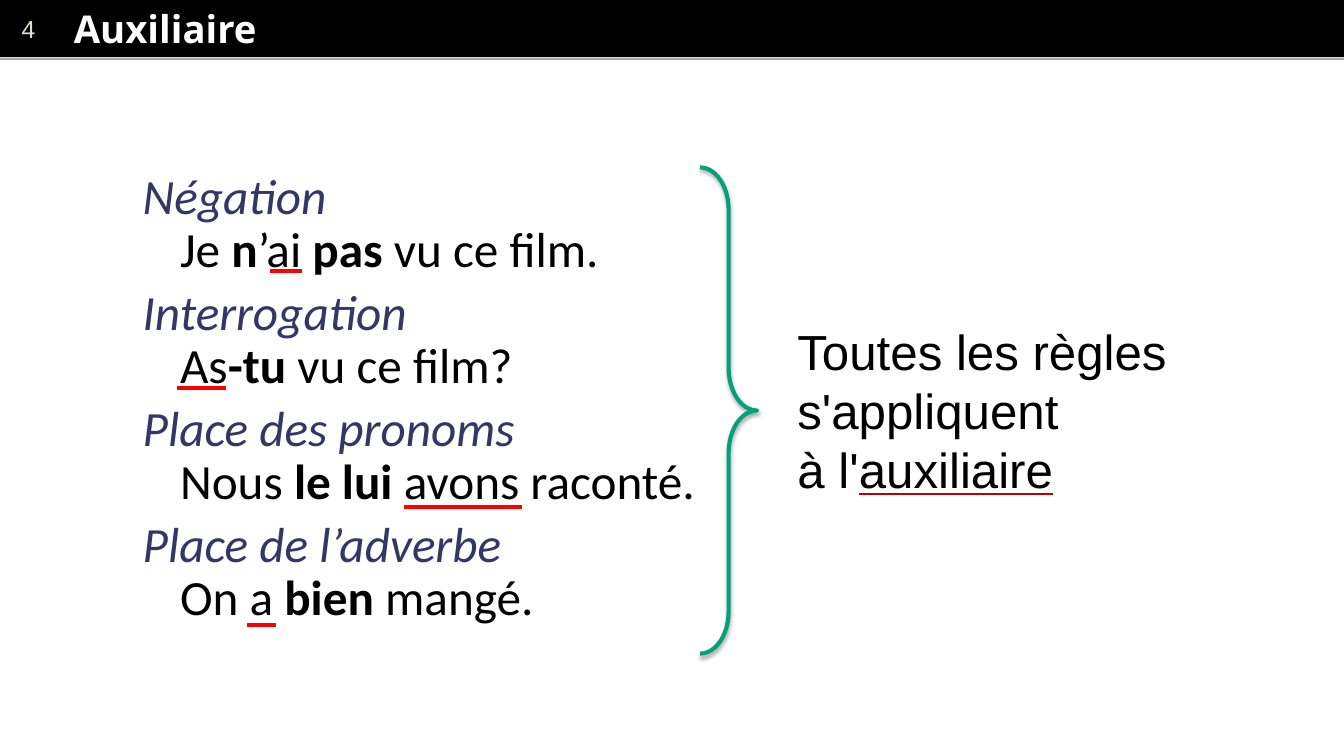
from dataclasses import dataclass
from typing import NamedTuple

from lxml.etree import SubElement
from pptx import Presentation
from pptx.dml.color import RGBColor
from pptx.enum.shapes import MSO_CONNECTOR, MSO_SHAPE
from pptx.enum.text import MSO_ANCHOR, PP_ALIGN
from pptx.oxml.ns import qn
from pptx.util import Inches, Pt

COLOURS = {
    "black": "000000", "white": "FFFFFF", "number": "E7DED1", "rule": "A6A6A6",
    "heading": "333766", "brace": "04A078", "mark": "FF0000", "underline": "C00000",
}
WIDTH, HEIGHT = Inches(13.65), Inches(7.68)
HANGING = Inches(0.38)


class Area(NamedTuple):
    """Left, top, width and height in percent of the slide."""
    left: float
    top: float
    width: float
    height: float = 0

    def lengths(self) -> tuple[int, ...]:
        sizes = (WIDTH, HEIGHT, WIDTH, HEIGHT)
        return tuple(round(size * share / 100) for size, share in zip(sizes, self))


@dataclass
class Span:
    text: str
    colour: str = "black"
    font: str = "Calibri"
    size: int = 36
    bold: bool = False
    italic: bool = False
    underline: bool = False


@dataclass
class Example:
    heading: str
    sentence: list[tuple[str, bool]]
    mark: Area


EXAMPLES = [
    Example("Négation", [("Je ", False), ("n", True), ("’ai ", False), ("pas", True),
                         (" vu ce film.", False)], Area(20.07, 35.81, 2.42)),
    Example("Interrogation", [("As", False), ("-tu", True), (" vu ce film?", False)],
            Area(13.19, 51.3, 3.66)),
    Example("Place des pronoms", [("Nous ", False), ("le lui ", True),
                                  ("avons raconté.", False)], Area(30.04, 67.06, 8.79)),
    Example("Place de l’adverbe", [("On a ", False), ("bien", True), (" mangé.", False)],
            Area(18.39, 82.68, 2.12)),
]
CONCLUSION = [
    [Span("Toutes les règles", font="Arial")],
    [Span("s'appliquent", font="Arial")],
    [Span("à l'", font="Arial"), Span("auxiliaire", font="Arial", underline=True)],
]


def colour(name: str) -> RGBColor:
    return RGBColor.from_string(COLOURS[name])


def add_span(para, span: Span) -> None:
    run = para.add_run()
    run.text = span.text
    run.font.name, run.font.size = span.font, Pt(span.size)
    run.font.bold, run.font.italic = span.bold, span.italic
    run.font.color.rgb = colour(span.colour)
    if span.underline:
        run.font.underline = True
        line_fill = run.font.fill._xPr.find(qn("a:solidFill"))
        underline_fill = line_fill.makeelement(qn("a:uFill"))
        line_fill.addnext(underline_fill)
        solid = SubElement(underline_fill, qn("a:solidFill"))
        SubElement(solid, qn("a:srgbClr"), val=COLOURS["underline"])


def add_line(page, area: Area, colour_name: str, points: float) -> None:
    left, top, width, _ = area.lengths()
    line = page.shapes.add_connector(MSO_CONNECTOR.STRAIGHT, left, top, left + width, top)
    line.line.color.rgb, line.line.width = colour(colour_name), Pt(points)
    SubElement(line._element.spPr, qn("a:effectLst"))


def add_panel(page, area: Area, fill: str):
    panel = page.shapes.add_shape(MSO_SHAPE.RECTANGLE, *area.lengths())
    panel.shadow.inherit = False
    panel.fill.solid()
    panel.fill.fore_color.rgb = colour(fill)
    panel.line.fill.background()
    panel.text_frame.vertical_anchor = MSO_ANCHOR.MIDDLE
    panel.text_frame.paragraphs[0].alignment = PP_ALIGN.LEFT
    return panel


def add_header(page) -> None:
    bar = add_panel(page, Area(0, 0, 100, 7.55), "black")
    bar.text_frame.margin_left = Inches(0.22)
    add_span(bar.text_frame.paragraphs[0], Span("4", "number", "Arial", 18))
    add_line(page, Area(0, 7.81, 100), "rule", 2)
    title = page.shapes.add_textbox(*Area(4.47, 0.13, 94.14, 7.29).lengths())
    frame = title.text_frame
    frame.word_wrap, frame.vertical_anchor = True, MSO_ANCHOR.MIDDLE
    frame.margin_left = Inches(0.14)
    frame.margin_top = frame.margin_right = frame.margin_bottom = Inches(0.04)
    add_span(frame.paragraphs[0], Span("Auxiliaire", "white", "Open Sans", 28, bold=True))


def add_examples(page) -> None:
    box = page.shapes.add_textbox(*Area(9.89, 22.14, 65.93, 72.66).lengths())
    frame = box.text_frame
    frame.word_wrap = True
    for index, example in enumerate(EXAMPLES):
        para = frame.add_paragraph() if index else frame.paragraphs[0]
        para.line_spacing, para.space_before = 0.9, Pt(7)
        properties = para._p.get_or_add_pPr()
        properties.set("marL", str(HANGING))
        properties.set("indent", str(-HANGING))
        add_span(para, Span(example.heading, "heading", italic=True))
        para.add_line_break()
        for text, bold in example.sentence:
            add_span(para, Span(text, bold=bold))


def add_brace(page) -> None:
    brace = page.shapes.add_shape(MSO_SHAPE.RIGHT_BRACE, *Area(52.09, 22.14, 4.25, 64.32).lengths())
    brace.adjustments[0], brace.adjustments[1] = 0.74, 0.5
    brace.fill.background()
    brace.line.color.rgb, brace.line.width = colour("brace"), Pt(3)
    # Soft shadow straight below
    brace.shadow.inherit = False
    effects = brace._element.spPr.find(qn("a:effectLst"))
    shadow = SubElement(effects, qn("a:outerShdw"), blurRad=str(Pt(3.1)),
                        dist=str(Pt(1.8)), dir="5400000", rotWithShape="0")
    shade = SubElement(shadow, qn("a:srgbClr"), val=COLOURS["black"])
    SubElement(shade, qn("a:alpha"), val="35000")


def add_conclusion(page) -> None:
    frame = add_panel(page, Area(58.61, 36.85, 27.4, 34.77), "white").text_frame
    frame.word_wrap = False
    for index, spans in enumerate(CONCLUSION):
        para = frame.add_paragraph() if index else frame.paragraphs[0]
        para.alignment = PP_ALIGN.LEFT
        for span in spans:
            add_span(para, span)


def main() -> None:
    deck = Presentation()
    deck.slide_width, deck.slide_height = WIDTH, HEIGHT
    page = deck.slides.add_slide(deck.slide_layouts[6])
    add_header(page)
    add_examples(page)
    add_brace(page)
    add_conclusion(page)
    # Red marks under the auxiliaries
    for example in EXAMPLES:
        add_line(page, example.mark, "mark", 3)
    deck.save("out.pptx")


if __name__ == "__main__":
    main()
